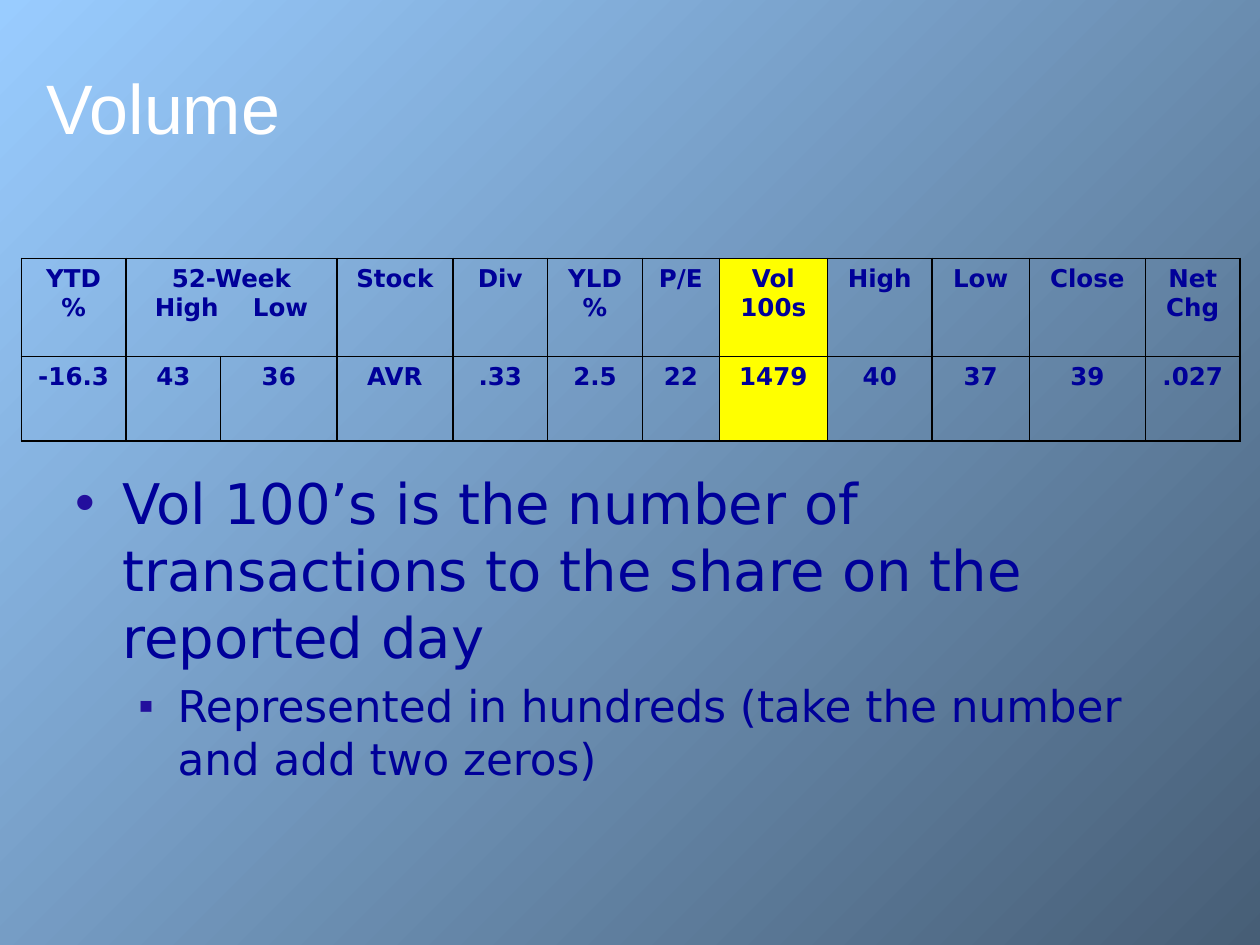
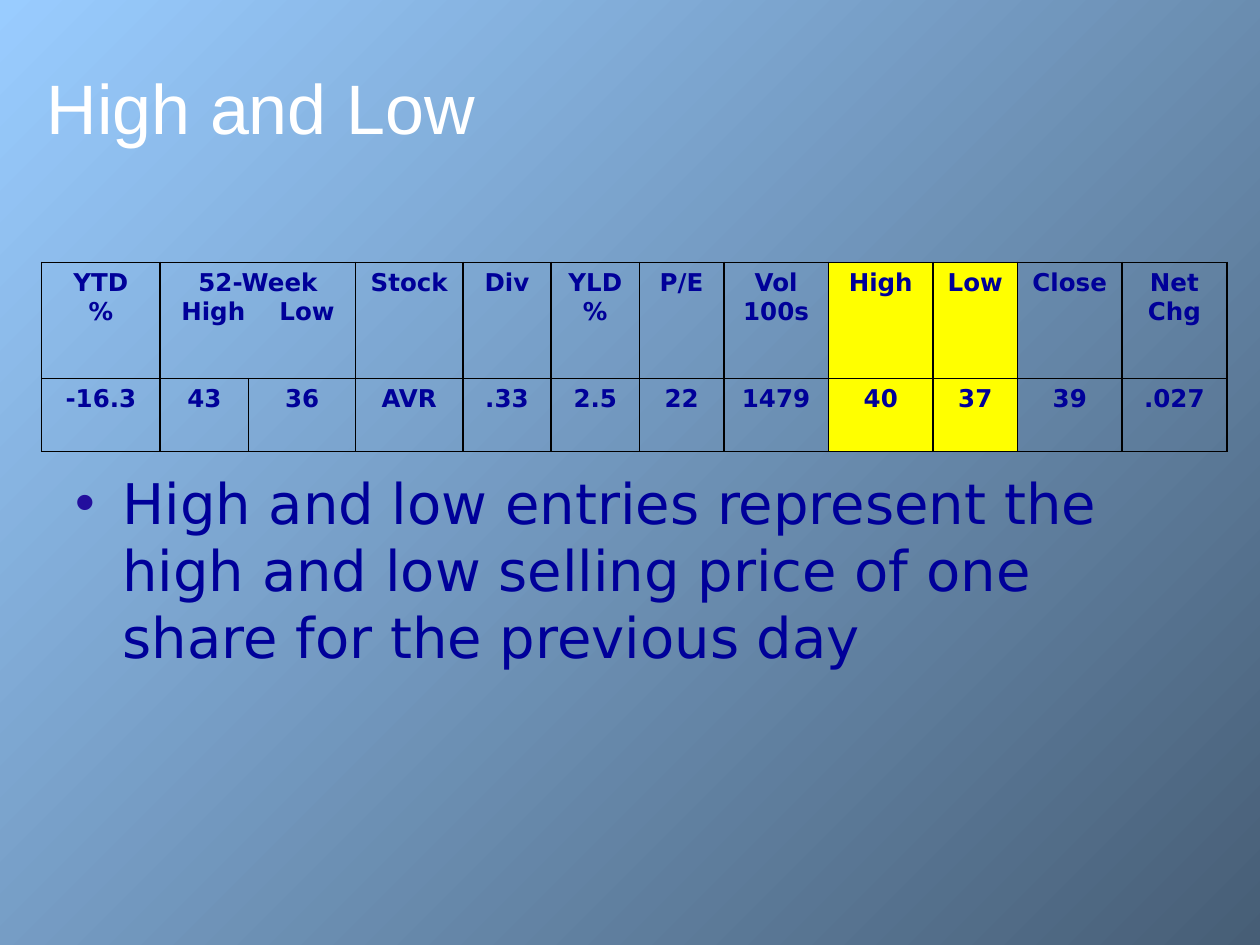
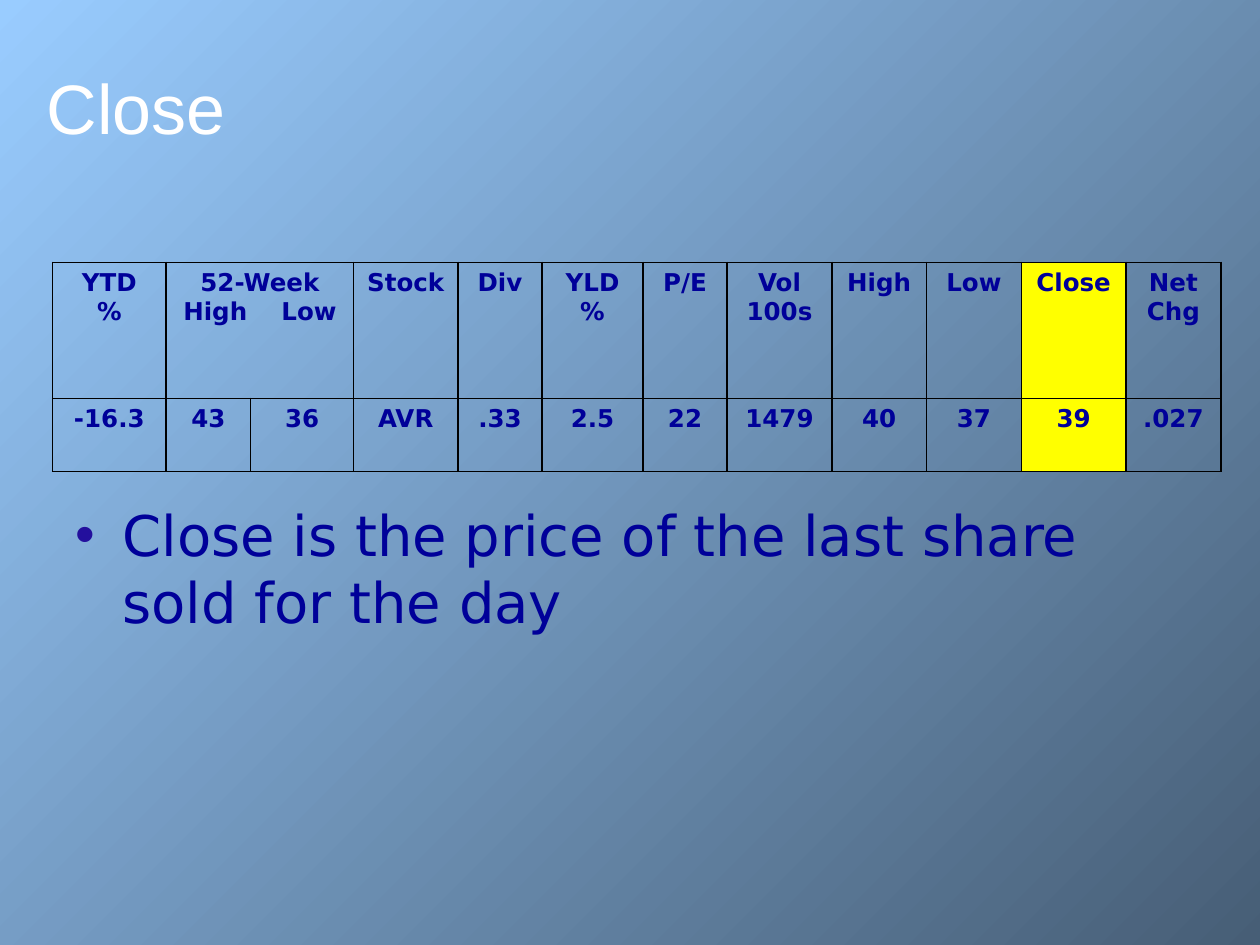
"""Build three slides that explain columns of a stock table."""
from lxml.etree import SubElement
from pptx import Presentation
from pptx.dml.color import RGBColor
from pptx.enum.text import MSO_ANCHOR, MSO_AUTO_SIZE, PP_ALIGN
from pptx.oxml.ns import qn
from pptx.util import Cm, Pt

COLORS = {
    "sky": "99CCFF",
    "slate": "475E76",
    "title": "FFFFFF",
    "ink": "000099",
    "bullet": "230F9D",
    "highlight": "FFFF00",
    "border": "000000",
}
TITLE_FONT = "Arial"
BODY_FONT = "DejaVu Sans"
WORD_GAP = "1460"

HEADINGS = [
    ["YTD", "%"], ["52-Week", "High Low"], [], ["Stock"], ["Div"], ["YLD", "%"],
    ["P/E"], ["Vol", "100s"], ["High"], ["Low"], ["Close"], ["Net", "Chg"],
]
QUOTE = ["-16.3", "43", "36", "AVR", ".33", "2.5", "22", "1479", "40", "37", "39", ".027"]
ROWS = [HEADINGS, [[value] for value in QUOTE]]

LEVELS = [
    {"size": 32, "mark": "•", "left": 0.95, "hang": 0.95},
    {"size": 25, "mark": "▪", "left": 2.06, "hang": 0.79},
]

LESSONS = [
    {
        "title": "Volume",
        "corner": (0.43, 5.21),
        "columns": [2.11, 1.91, 2.34, 2.34, 1.91, 1.91, 1.55, 2.18, 2.11, 1.96, 2.34, 1.91],
        "rows": [1.98, 1.7],
        "highlight": [7],
        "text_top": 9.32,
        "points": [
            "Vol 100’s is the number of transactions to the share on the reported day",
            "Represented in hundreds (take the number and add two zeros)",
        ],
    },
    {
        "title": "High and Low",
        "corner": (0.84, 5.29),
        "columns": [2.39, 1.78, 2.16, 2.16, 1.78, 1.78, 1.7, 2.11, 2.11, 1.7, 2.11, 2.11],
        "rows": [2.34, 1.47],
        "highlight": [8, 9],
        "text_top": 9.32,
        "points": [
            "High and low entries represent the high and low selling price of one share "
            "for the previous day",
        ],
    },
    {
        "title": "Close",
        "corner": (1.06, 5.29),
        "columns": [2.29, 1.7, 2.08, 2.1, 1.7, 2.03, 1.7, 2.11, 1.91, 1.91, 2.11, 1.91],
        "rows": [2.74, 1.47],
        "highlight": [10],
        "text_top": 9.96,
        "points": ["Close is the price of the last share sold for the day"],
    },
]
TEXT_BOTTOM = 16.51


def add_run(paragraph, text, size, font=BODY_FONT, color="ink", bold=False):
    run = paragraph.add_run()
    run.text = text
    run.font.size = Pt(size)
    run.font.name = font
    run.font.bold = bold
    run.font.color.rgb = RGBColor.from_string(COLORS[color])
    return run


def add_borders(cell):
    properties = cell._tc.get_or_add_tcPr()
    for side in ("a:lnL", "a:lnR", "a:lnT", "a:lnB"):
        line = SubElement(properties, qn(side), w=str(Pt(1)))
        fill = SubElement(line, qn("a:solidFill"))
        SubElement(fill, qn("a:srgbClr"), val=COLORS["border"])


prs = Presentation()
prs.slide_width, prs.slide_height = Cm(25.4), Cm(19.05)

backdrop = prs.slide_master.background.fill
backdrop.gradient()
backdrop.gradient_angle = 315
for stop, shade in zip(backdrop.gradient_stops, ("sky", "slate")):
    stop.color.rgb = RGBColor.from_string(COLORS[shade])

for lesson in LESSONS:
    slide = prs.slides.add_slide(prs.slide_layouts[5])

    title = slide.shapes.title
    title.left, title.top = Cm(0.69), Cm(0.71)
    title.width, title.height = Cm(24), Cm(2.41)
    title.text_frame.vertical_anchor = MSO_ANCHOR.BOTTOM
    title.text_frame.auto_size = MSO_AUTO_SIZE.NONE
    heading = title.text_frame.paragraphs[0]
    heading.alignment = PP_ALIGN.LEFT
    add_run(heading, lesson["title"], 40, TITLE_FONT, "title")

    left, top = lesson["corner"]
    quotes = slide.shapes.add_table(
        len(ROWS), len(QUOTE), Cm(left), Cm(top),
        Cm(sum(lesson["columns"])), Cm(sum(lesson["rows"])),
    ).table
    quotes.first_row = quotes.horz_banding = False
    for column, width in zip(quotes.columns, lesson["columns"]):
        column.width = Cm(width)
    for row, height in zip(quotes.rows, lesson["rows"]):
        row.height = Cm(height)
    quotes.cell(0, 1).merge(quotes.cell(0, 2))

    for row_index, entries in enumerate(ROWS):
        for column_index, lines in enumerate(entries):
            cell = quotes.cell(row_index, column_index)
            add_borders(cell)
            if column_index in lesson["highlight"]:
                cell.fill.solid()
                cell.fill.fore_color.rgb = RGBColor.from_string(COLORS["highlight"])
            else:
                cell.fill.background()
            for line_index, line in enumerate(lines):
                frame = cell.text_frame
                entry = frame.add_paragraph() if line_index else frame.paragraphs[0]
                entry.alignment = PP_ALIGN.CENTER
                for word_index, word in enumerate(line.split()):
                    if word_index:
                        gap = add_run(entry, " ", 14, bold=True)
                        gap._r.get_or_add_rPr().set("spc", WORD_GAP)
                    add_run(entry, word, 14, bold=True)

    explanation = slide.shapes.add_textbox(
        Cm(1.27), Cm(lesson["text_top"]), Cm(22.86), Cm(TEXT_BOTTOM - lesson["text_top"])
    ).text_frame
    explanation.word_wrap = True
    for level, point in enumerate(lesson["points"]):
        style = LEVELS[level]
        paragraph = explanation.add_paragraph() if level else explanation.paragraphs[0]
        paragraph.level = level
        paragraph.space_before = Pt(style["size"] * 0.2)
        properties = paragraph._p.get_or_add_pPr()
        properties.set("marL", str(Cm(style["left"])))
        properties.set("indent", str(-Cm(style["hang"])))
        bullet_color = SubElement(properties, qn("a:buClr"))
        SubElement(bullet_color, qn("a:srgbClr"), val=COLORS["bullet"])
        SubElement(properties, qn("a:buFont"), typeface=TITLE_FONT)
        SubElement(properties, qn("a:buChar"), char=style["mark"])
        add_run(paragraph, point, style["size"])

prs.save("out.pptx")
